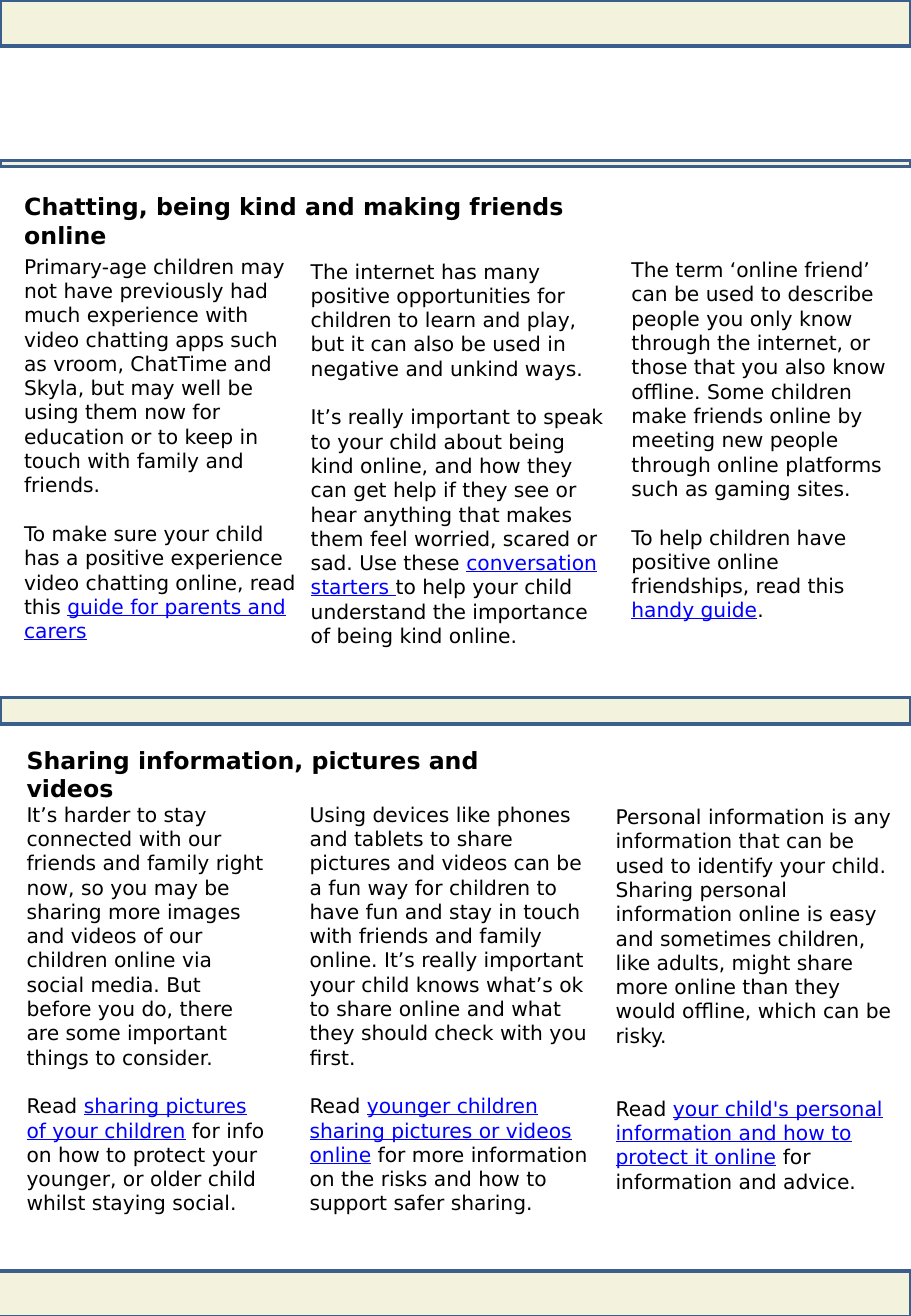
"""Build a one-page parent guide with two headed sections of three columns."""
import pptx
import pptx.util
import pptx.dml.color
import pptx.enum.text
import pptx.enum.shapes

Pt = pptx.util.Pt
HUES = {"text": "000000", "link": "0000FF", "fill": "F3F3DD", "edge": "3A5F8C"}
LINE = 14.4

deck = pptx.Presentation()
deck.slide_width = pptx.util.Inches(7.5)
deck.slide_height = pptx.util.Inches(10.83)
page = deck.slides.add_slide(deck.slide_layouts[5])


def area(left, top, width, height):
    """Turn percentages of the slide into lengths."""
    wide, high = deck.slide_width / 100, deck.slide_height / 100
    return [int(left * wide), int(top * high), int(width * wide), int(height * high)]


def write(para, text, hue="text", **style):
    """Add one run in the given colour and style."""
    run = para.add_run()
    run.text = text
    look = {"name": "DejaVu Sans", "size": Pt(12), "bold": False, **style}
    for key, value in look.items():
        setattr(run.font, key, value)
    run.font.color.rgb = pptx.dml.color.RGBColor.from_string(HUES[hue])


frame = {
    "word_wrap": True,
    "auto_size": pptx.enum.text.MSO_AUTO_SIZE.SHAPE_TO_FIT_TEXT,
    "vertical_anchor": pptx.enum.text.MSO_ANCHOR.TOP,
}

heads = [
    (page.shapes.title, (1.33, 14.13, 71.47, 3.14),
     "Chatting, being kind and making friends online"),
    (page.shapes.add_textbox(0, 0, 0, 0), (1.6, 56.23, 62.67, 3.14),
     "Sharing information, pictures and videos"),
]
for head, spot, text in heads:
    head.left, head.top, head.width, head.height = area(*spot)
    for key, value in frame.items():
        setattr(head.text_frame, key, value)
    para = head.text_frame.paragraphs[0]
    para.alignment = pptx.enum.text.PP_ALIGN.LEFT
    write(para, text, size=Pt(14), bold=True)

bars = [(0, 0, 100, 3.51), (0, 53, 100, 2.03), (0, 12.19, 100, 0.46),
        (-0.27, 96.58, 100.27, 3.51)]
for spot in bars:
    bar = page.shapes.add_shape(pptx.enum.shapes.MSO_SHAPE.RECTANGLE, *area(*spot))
    bar.shadow.inherit = False
    bar.fill.solid()
    bar.fill.fore_color.rgb = pptx.dml.color.RGBColor.from_string(HUES["fill"])
    bar.line.color.rgb = pptx.dml.color.RGBColor.from_string(HUES["edge"])
    bar.line.width = Pt(2)

notes = [
    ((1.33, 18.84, 32.93, 30.75), 1,
     "Primary-age children may not have previously had much experience with video "
     "chatting apps such as vroom, ChatTime and Skyla, but may well be using them now "
     "for education or to keep in touch with family and friends.",
     "To make sure your child has a positive experience video chatting online, read this ",
     "guide for parents and carers", ""),
    ((32.8, 19.21, 35.07, 30.75), 1,
     "The internet has many positive opportunities for children to learn and play, but "
     "it can also be used in negative and unkind ways.",
     "It’s really important to speak to your child about being kind online, and how they "
     "can get help if they see or hear anything that makes them feel worried, scared or "
     "sad. Use these ",
     "conversation starters ",
     "to help your child understand the importance of being kind online."),
    ((68, 19.11, 31.73, 28.9), 1,
     "The term ‘online friend’ can be used to describe people you only know through the "
     "internet, or those that you also know offline. Some children make friends online by "
     "meeting new people through online platforms such as gaming sites.",
     "To help children have positive online friendships, read this ",
     "handy guide", "."),
    ((1.6, 60.48, 29.2, 32.59), 1,
     "It’s harder to stay connected with our friends and family right now, so you may be "
     "sharing more images and videos of our children online via social media. But before "
     "you do, there are some important things to consider.",
     "Read ", "sharing pictures of your children",
     " for info on how to protect your younger, or older child whilst staying social."),
    ((32.67, 60.48, 33.6, 32.59), 1,
     "Using devices like phones and tablets to share pictures and videos can be a fun way "
     "for children to have fun and stay in touch with friends and family online. It’s "
     "really important your child knows what’s ok to share online and what they should "
     "check with you first.",
     "Read ", "younger children sharing pictures or videos online",
     " for more information on the risks and how to support safer sharing."),
    ((66.27, 60.66, 32.93, 30.75), 2,
     "Personal information is any information that can be used to identify your child. "
     "Sharing personal information online is easy and sometimes children, like adults, "
     "might share more online than they would offline, which can be risky.",
     "Read ", "your child's personal information and how to protect it online",
     " for information and advice."),
]
for spot, gap, intro, lead, link, tail in notes:
    body = page.shapes.add_textbox(*area(*spot)).text_frame
    for key, value in frame.items():
        setattr(body, key, value)
    write(body.paragraphs[0], intro)
    para = body.add_paragraph()
    para.space_before = Pt(gap * LINE)
    write(para, lead)
    write(para, link, "link", underline=True)
    if tail:
        write(para, tail)

deck.save("out.pptx")
